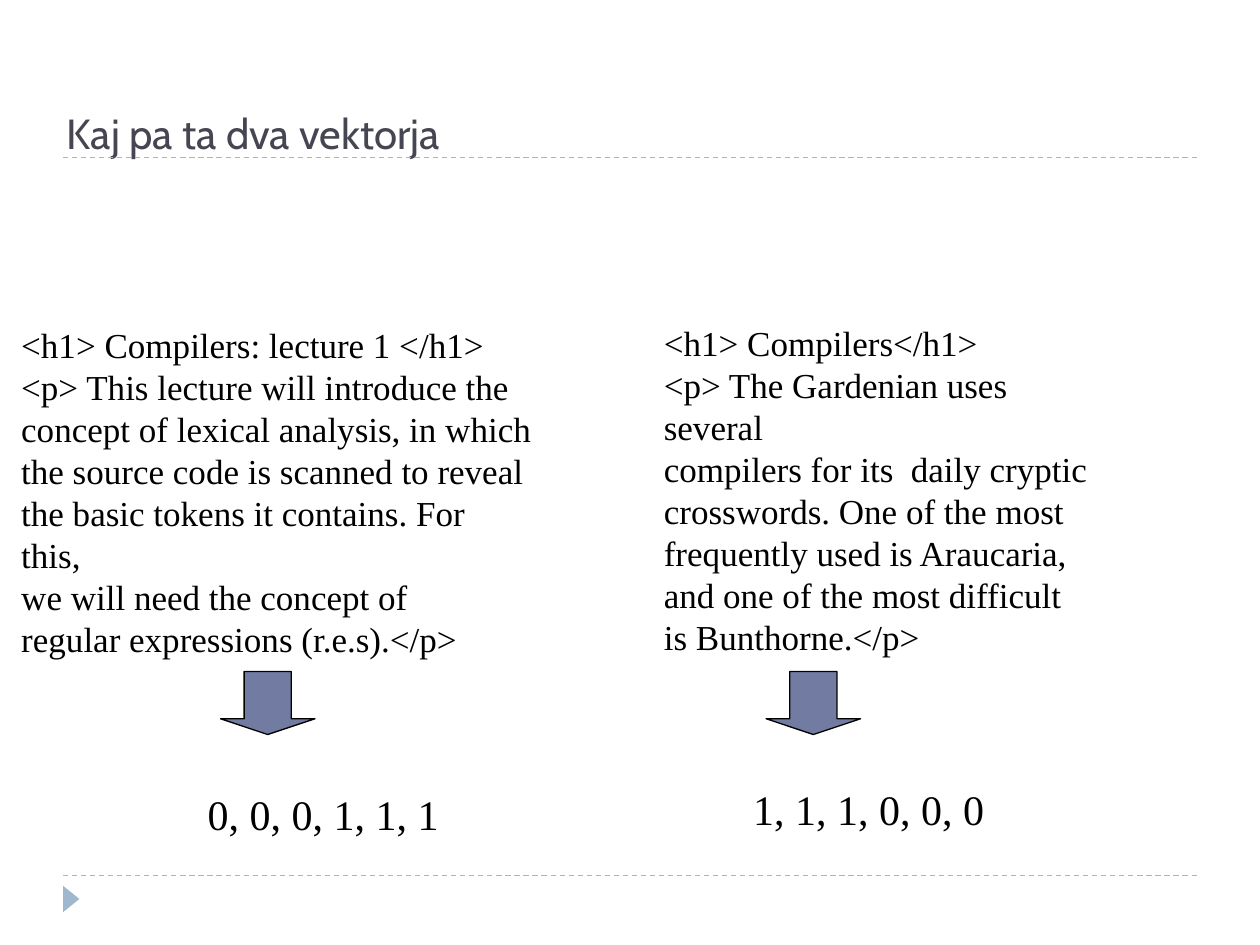
from lxml.etree import SubElement
from pptx import Presentation
from pptx.dml.color import RGBColor
from pptx.enum.dml import MSO_LINE
from pptx.enum.shapes import MSO_CONNECTOR, MSO_SHAPE
from pptx.enum.text import MSO_ANCHOR, PP_ALIGN
from pptx.oxml.ns import qn
from pptx.util import Inches, Pt

COLORS = {"title": "464653", "rule": "9FB8CD", "arrow": "727CA3", "text": "000000"}
SERIF = "Times New Roman"
MARGIN = 0.5

# Each column: left, page top, page width, arrow left, vector top
COLUMNS = [
    ((0.07, 2.52, 4.25, 1.75, 6.21),
     ["<h1> Compilers: lecture 1 </h1>",
      "<p> This lecture will introduce the",
      "concept of lexical analysis, in which",
      "the source code is scanned to reveal",
      "the basic tokens it contains. For this,",
      "we will need the concept of",
      "regular expressions (r.e.s).</p>"],
     "0, 0, 0, 1, 1, 1"),
    ((5.17, 2.5, 3.65, 6.08, 6.17),
     ["<h1> Compilers</h1>",
      "<p> The Gardenian uses several",
      "compilers for its  daily cryptic",
      "crosswords. One of the most",
      "frequently used is Araucaria,",
      "and one of the most difficult",
      "is Bunthorne.</p>"],
     "1, 1, 1, 0, 0, 0"),
]


def color(name):
    return RGBColor.from_string(COLORS[name])


def set_font(p, name, size, color_name):
    p.font.name, p.font.size = name, Pt(size)
    p.font.color.rgb = color(color_name)


def add_text(slide, box, lines, size, wrap):
    tf = slide.shapes.add_textbox(*map(Inches, box)).text_frame
    tf.word_wrap = wrap
    tf.text = "\n".join(lines)
    for p in tf.paragraphs:
        set_font(p, SERIF, size, "text")


def add_preset(slide, preset, box, fill):
    sp = slide.shapes.add_shape(preset, *map(Inches, box))
    sp.shadow.inherit = False
    sp.fill.solid()
    sp.fill.fore_color.rgb = color(fill)
    return sp


def add_frame(slide, width):
    """Dashed rules above and below the content, and the footer marker."""
    for y in (6.95, 1.25):
        line = slide.shapes.add_connector(
            MSO_CONNECTOR.STRAIGHT, Inches(MARGIN), Inches(y),
            Inches(width - MARGIN), Inches(y))
        line.line.color.rgb = color("rule")
        line.line.width = Pt(0.75)
        line.line.dash_style = MSO_LINE.DASH
        SubElement(line._element.spPr, qn("a:effectLst"))
    marker = add_preset(slide, MSO_SHAPE.ISOSCELES_TRIANGLE,
                        (0.46, 7.07, 0.21, 0.13), "rule")
    marker.rotation = 90
    marker.line.fill.background()


def add_title(slide, box, text):
    title = slide.shapes.title
    title.left, title.top, title.width, title.height = map(Inches, box)
    tf = title.text_frame
    tf.text = text
    tf.vertical_anchor = MSO_ANCHOR.BOTTOM
    p = tf.paragraphs[0]
    p.alignment = PP_ALIGN.LEFT
    set_font(p, "Cabin", 24, "title")


def add_column(slide, layout, page, vector):
    """A page of markup, an arrow down, and the vector it becomes."""
    left, top, width, arrow_left, vector_top = layout
    add_text(slide, (left, top, width, 2.43), page, 20, True)
    arrow = add_preset(slide, MSO_SHAPE.DOWN_ARROW,
                       (arrow_left, 5.33, 0.75, 0.5), "arrow")
    arrow.adjustments[0], arrow.adjustments[1] = 0.5, 0.25
    arrow.line.color.rgb = color("text")
    arrow.line.width = Pt(0.75)
    add_text(slide, (arrow_left - 0.2, vector_top, 2.03, 0.5), [vector], 24, False)


def main():
    prs = Presentation()
    prs.slide_width, prs.slide_height = Inches(10), Inches(7.5)
    slide = prs.slides.add_slide(prs.slide_layouts[5])
    add_frame(slide, 10)
    add_title(slide, (0.43, 0.05, 9.67, 1.25), "Kaj pa ta dva vektorja")
    for layout, page, vector in COLUMNS:
        add_column(slide, layout, page, vector)
    prs.save("out.pptx")


if __name__ == "__main__":
    main()
